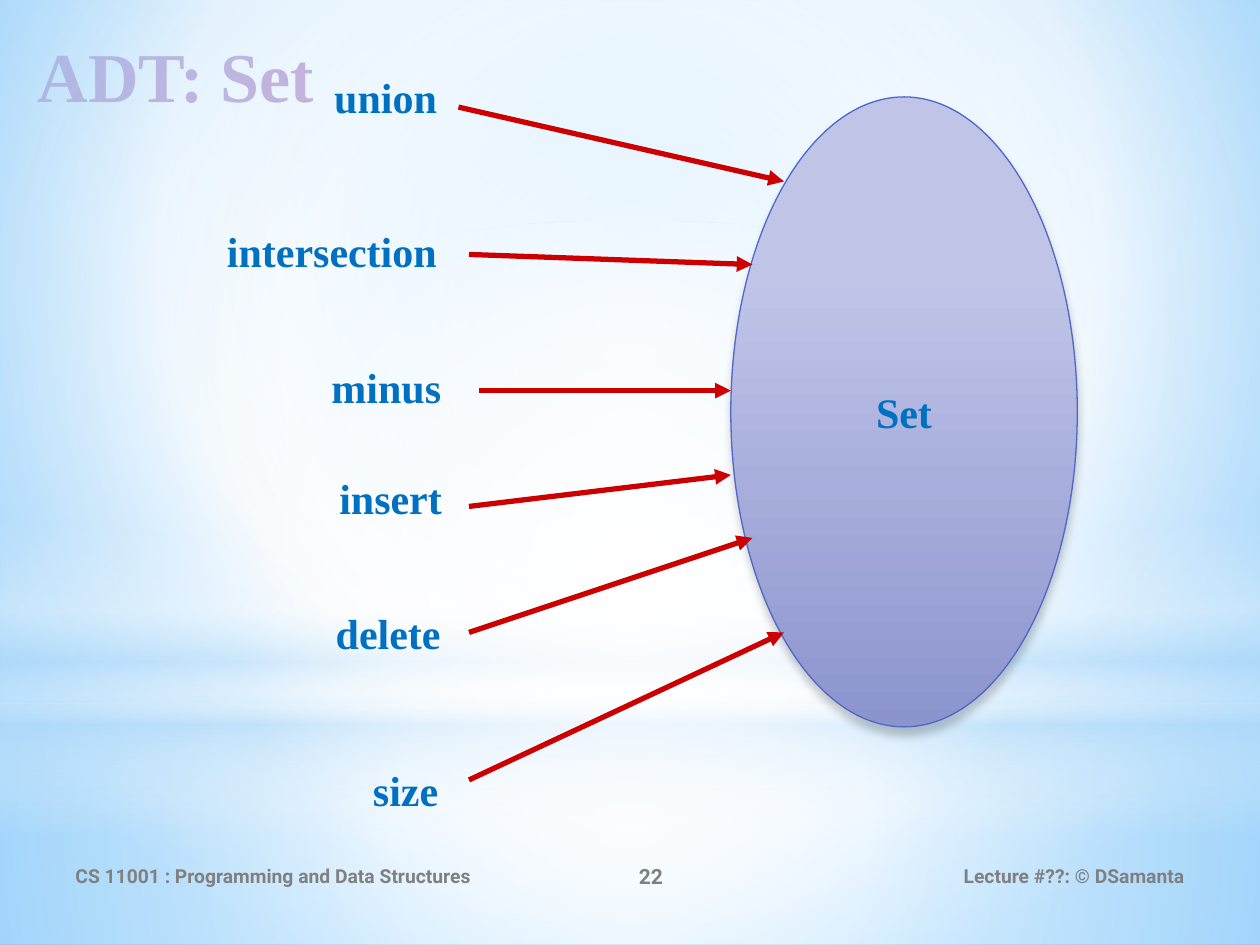
from dataclasses import dataclass

from lxml.etree import SubElement
from pptx import Presentation
from pptx.dml.color import RGBColor
from pptx.enum.shapes import MSO_CONNECTOR, MSO_SHAPE
from pptx.enum.text import MSO_ANCHOR, PP_ALIGN
from pptx.oxml import parse_xml
from pptx.oxml.ns import nsdecls, qn
from pptx.util import Pt


@dataclass(frozen=True)
class Theme:
    title: str = "7030A0"
    label: str = "0070C0"
    foot: str = "808080"
    arrow: str = "CC0000"
    edge: str = "4E67C8"
    white: str = "FFFFFF"
    sky: str = "B4DCFA"
    serif: str = "Times New Roman"
    sans: str = "Roboto"
    head: int = 40
    body: int = 24
    page: int = 12
    note: int = 11


@dataclass(frozen=True)
class Box:
    left: float
    top: float
    width: float
    height: float

    def args(self) -> list:
        return [Pt(v) for v in (self.left, self.top, self.width, self.height)]


@dataclass(frozen=True)
class Panel:
    kind: MSO_SHAPE
    box: Box
    stops: tuple
    focus: tuple | None = None


@dataclass(frozen=True)
class Method:
    """An operation of the set: its label box and its arrow."""
    name: str
    left: float
    top: float
    width: float
    start: tuple
    end: tuple


@dataclass(frozen=True)
class Foot:
    text: str
    left: float
    width: float
    size: int
    align: PP_ALIGN


T = Theme()
MID = (50, 50, 50, 50)
PANELS = [
    Panel(MSO_SHAPE.RECTANGLE, Box(0, 402, 720, 138),
          ((0, T.white, 91), (37, T.white, 76), (100, T.sky, 79)), MID),
    Panel(MSO_SHAPE.RECTANGLE, Box(0, 0, 720, 402),
          ((0, T.white, 89), (48, T.white, 62), (100, T.sky, 79)), MID),
    Panel(MSO_SHAPE.RECTANGLE, Box(0, 297, 720, 180),
          ((0, T.white, 0), (29, T.white, 30), (45, T.sky, 40),
           (55, T.white, 26), (65, T.sky, 60), (100, T.white, 0))),
    Panel(MSO_SHAPE.OVAL, Box(0, 126, 720, 402),
          ((0, T.white, 100), (56, T.white, 0)), MID),
]
METHODS = [
    Method("union", 178.6, 37.4, 83.5, (262, 61.2), (448, 103.7)),
    Method("intersection", 120.2, 125.3, 139, (268, 145.4), (430, 151.2)),
    Method("minus", 170, 203, 101.5, (273.6, 223.2), (417.6, 223.2)),
    Method("insert", 175.7, 266.4, 95, (268, 289.4), (417.6, 271.4)),
    Method("delete", 175.7, 343.4, 92.2, (268, 361.4), (430, 307.4)),
    Method("size", 195.8, 433.4, 72, (268, 445.7), (448, 361.4)),
]
FEET = [
    Foot("CS 11001 : Programming and Data Structures", 36, 264, T.note, PP_ALIGN.LEFT),
    Foot("22", 300, 144, T.page, PP_ALIGN.CENTER),
    Foot("Lecture #??: © DSamanta", 486, 198, T.note, PP_ALIGN.RIGHT),
]


def shade(fill, root, stops: tuple, focus: tuple | None = None) -> None:
    """Fill with (place, colour, opacity) stops, round a focus or downwards."""
    fill.gradient()
    marks = "".join(
        f'<a:gs pos="{at * 1000}"><a:srgbClr val="{tint}">'
        f'<a:alpha val="{alpha * 1000}"/></a:srgbClr></a:gs>'
        for at, tint, alpha in stops)
    if focus:
        sides = " ".join(f'{s}="{v * 1000}"' for s, v in zip("ltrb", focus))
        way = f'<a:path path="circle"><a:fillToRect {sides}/></a:path>'
    else:
        way = '<a:lin ang="5400000" scaled="0"/>'
    old = next(root.iter(qn("a:gradFill")))
    old.getparent().replace(old, parse_xml(
        f'<a:gradFill {nsdecls("a")} rotWithShape="1"><a:gsLst>{marks}</a:gsLst>'
        f'{way}</a:gradFill>'))


def write(shape, text: str, *, size: int, color: str, font: str = T.serif,
          align: PP_ALIGN = PP_ALIGN.CENTER,
          anchor: MSO_ANCHOR = MSO_ANCHOR.TOP, wrap: bool = True) -> None:
    frame = shape.text_frame
    frame.word_wrap, frame.vertical_anchor = wrap, anchor
    para = frame.paragraphs[0]
    para.alignment = align
    run = para.add_run()
    run.text = text
    run.font.name, run.font.size, run.font.bold = font, Pt(size), True
    run.font.color.rgb = RGBColor.from_string(color)


def draw_panel(slide, panel: Panel):
    shape = slide.shapes.add_shape(panel.kind, *panel.box.args())
    shape.shadow.inherit = False
    shape.line.fill.background()
    shade(shape.fill, shape._element, panel.stops, panel.focus)
    return shape


def draw_set(slide) -> None:
    oval = draw_panel(slide, Panel(
        MSO_SHAPE.OVAL, Box(417.6, 55.4, 198, 360),
        ((28, "C0C5E8", 100), (100, "8C94CE", 100))))
    oval.line.color.rgb = RGBColor.from_string(T.edge)
    oval.line.width = Pt(0.75)
    glow = oval._element.spPr.find(qn("a:effectLst"))
    glow.append(parse_xml(
        f'<a:outerShdw {nsdecls("a")} blurRad="{Pt(5)}" dist="{Pt(4)}" dir="5400000" '
        'rotWithShape="0"><a:srgbClr val="000000"><a:alpha val="20000"/>'
        '</a:srgbClr></a:outerShdw>'))
    write(oval, "Set", size=T.body, color=T.label,
          anchor=MSO_ANCHOR.MIDDLE, wrap=False)


def draw_arrow(slide, start: tuple, end: tuple) -> None:
    line = slide.shapes.add_connector(
        MSO_CONNECTOR.STRAIGHT, *[Pt(v) for v in start + end])
    line.line.color.rgb = RGBColor.from_string(T.arrow)
    line.line.width = Pt(3)
    SubElement(line.line._get_or_add_ln(), qn("a:tailEnd"), type="triangle")
    SubElement(line._element.spPr, qn("a:effectLst"))


def draw_label(slide, item: Method) -> None:
    box = Box(item.left, item.top, item.width, 36)
    write(slide.shapes.add_textbox(*box.args()), item.name,
          size=T.body, color=T.label)


def draw_foot(slide, foot: Foot) -> None:
    box = Box(foot.left, 486, foot.width, 28.8)
    write(slide.shapes.add_textbox(*box.args()), foot.text, size=foot.size,
          color=T.foot, font=T.sans, align=foot.align, anchor=MSO_ANCHOR.MIDDLE)


def draw_title(slide) -> None:
    title = slide.shapes.title
    title.left, title.top, title.width, title.height = Box(14.4, 15, 686, 90).args()
    write(title, "ADT: Set", size=T.head, color=T.title, align=PP_ALIGN.LEFT)


def main() -> None:
    deck = Presentation()
    deck.slide_width, deck.slide_height = Pt(720), Pt(540)
    slide = deck.slides.add_slide(deck.slide_layouts[5])
    shade(slide.background.fill, slide._element,
          ((0, "9ED5FF", 100), (60, T.white, 100), (100, "5BB9FF", 100)),
          (20, 10, 20, 60))
    for panel in PANELS:
        draw_panel(slide, panel)
    draw_title(slide)
    for foot in FEET:
        draw_foot(slide, foot)
    draw_set(slide)
    for item in METHODS:
        draw_arrow(slide, item.start, item.end)
        draw_label(slide, item)
    deck.save("out.pptx")


if __name__ == "__main__":
    main()
